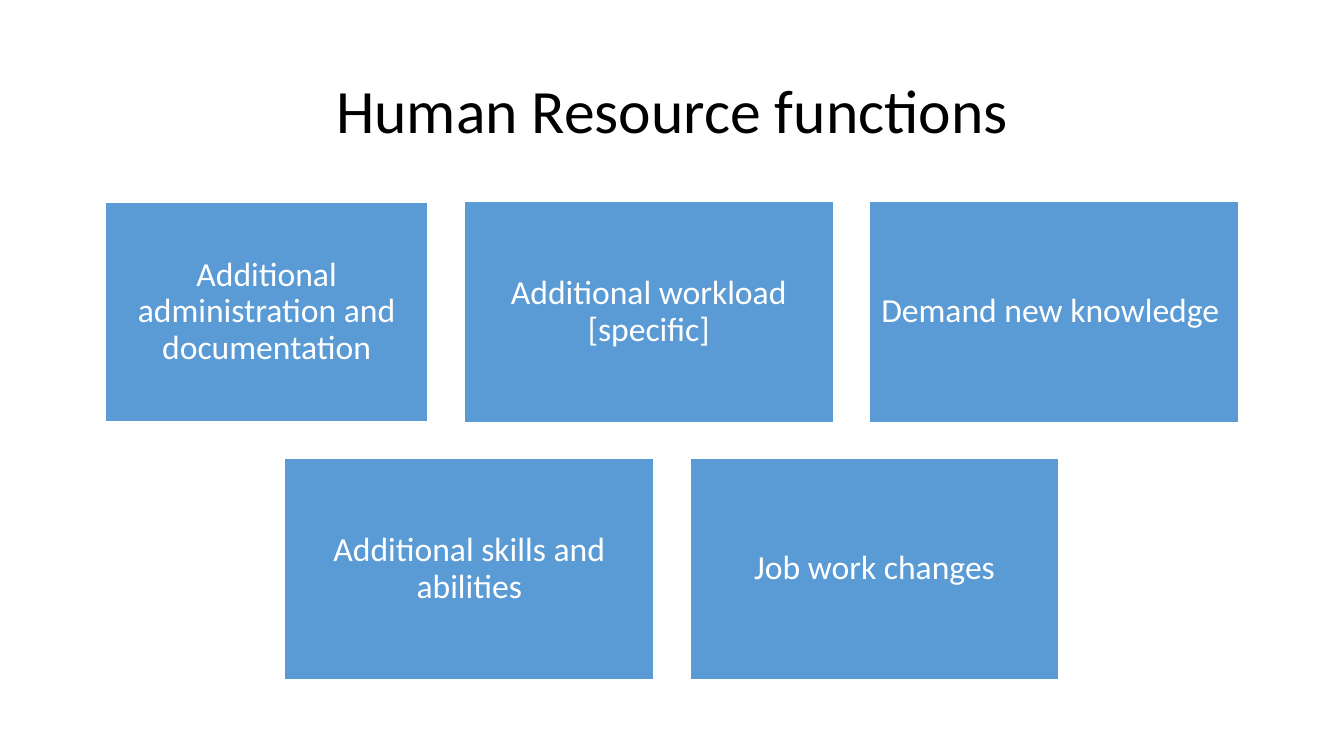
from pptx import Presentation
from pptx.dml.color import RGBColor
from pptx.enum.shapes import MSO_SHAPE
from pptx.enum.text import MSO_ANCHOR, PP_ALIGN
from pptx.util import Inches, Pt

GAP = 0.36
CARD_HEIGHT = 2.19
CARD_ROWS = [
    [
        ("Additional administration and documentation", 3.2, 2.18),
        ("Additional workload [specific]", 3.66, CARD_HEIGHT),
        ("Demand new knowledge ", 3.66, CARD_HEIGHT),
    ],
    [
        ("Additional skills and abilities", 3.66, CARD_HEIGHT),
        ("Job work changes", 3.66, CARD_HEIGHT),
    ],
]


def color(value):
    """Turn a hex string into a colour."""
    return RGBColor.from_string(value)


def write_text(shape, text, size, hex_color):
    """Fill a shape with one centred paragraph."""
    frame = shape.text_frame
    frame.text = text
    frame.word_wrap = True
    frame.vertical_anchor = MSO_ANCHOR.MIDDLE
    para = frame.paragraphs[0]
    para.alignment = PP_ALIGN.CENTER
    para.line_spacing = 0.9
    font = para.runs[0].font
    font.name = "Calibri"
    font.size = Pt(size)
    font.color.rgb = color(hex_color)


def place_title(page, text, left, top, width, height):
    """Move the title placeholder into its box and fill it."""
    title = page.shapes.title
    title.left, title.top = Inches(left), Inches(top)
    title.width, title.height = Inches(width), Inches(height)
    write_text(title, text, 44, "000000")


def add_card(page, text, left, top, width, height):
    """Add one blue card with white text."""
    card = page.shapes.add_shape(
        MSO_SHAPE.RECTANGLE, Inches(left), Inches(top), Inches(width), Inches(height)
    )
    card.shadow.inherit = False
    card.fill.solid()
    card.fill.fore_color.rgb = color("5B9BD5")
    card.line.color.rgb = color("FFFFFF")
    card.line.width = Pt(1)
    frame = card.text_frame
    frame.margin_left = frame.margin_right = Inches(0.1)
    frame.margin_top = frame.margin_bottom = Inches(0.1)
    write_text(card, text, 24, "FFFFFF")


def add_card_rows(page, rows, left, top, width):
    """Stack rows of cards, each row centred in the given width."""
    for row_index, row in enumerate(rows):
        row_width = sum(card[1] for card in row) + GAP * (len(row) - 1)
        card_left = left + (width - row_width) / 2
        row_top = top + row_index * (CARD_HEIGHT + GAP)
        for text, card_width, card_height in row:
            card_top = row_top + (CARD_HEIGHT - card_height) / 2
            add_card(page, text, card_left, card_top, card_width, card_height)
            card_left += card_width + GAP


def main():
    """Build and save the slide."""
    deck = Presentation()
    deck.slide_width, deck.slide_height = Inches(13.33), Inches(7.5)
    page = deck.slides.add_slide(deck.slide_layouts[5])
    place_title(page, " Human Resource functions ", 0.92, 0.4, 11.5, 1.45)
    add_card_rows(page, CARD_ROWS, 1.04, 2, 11.25)
    deck.save("out.pptx")


if __name__ == "__main__":
    main()
